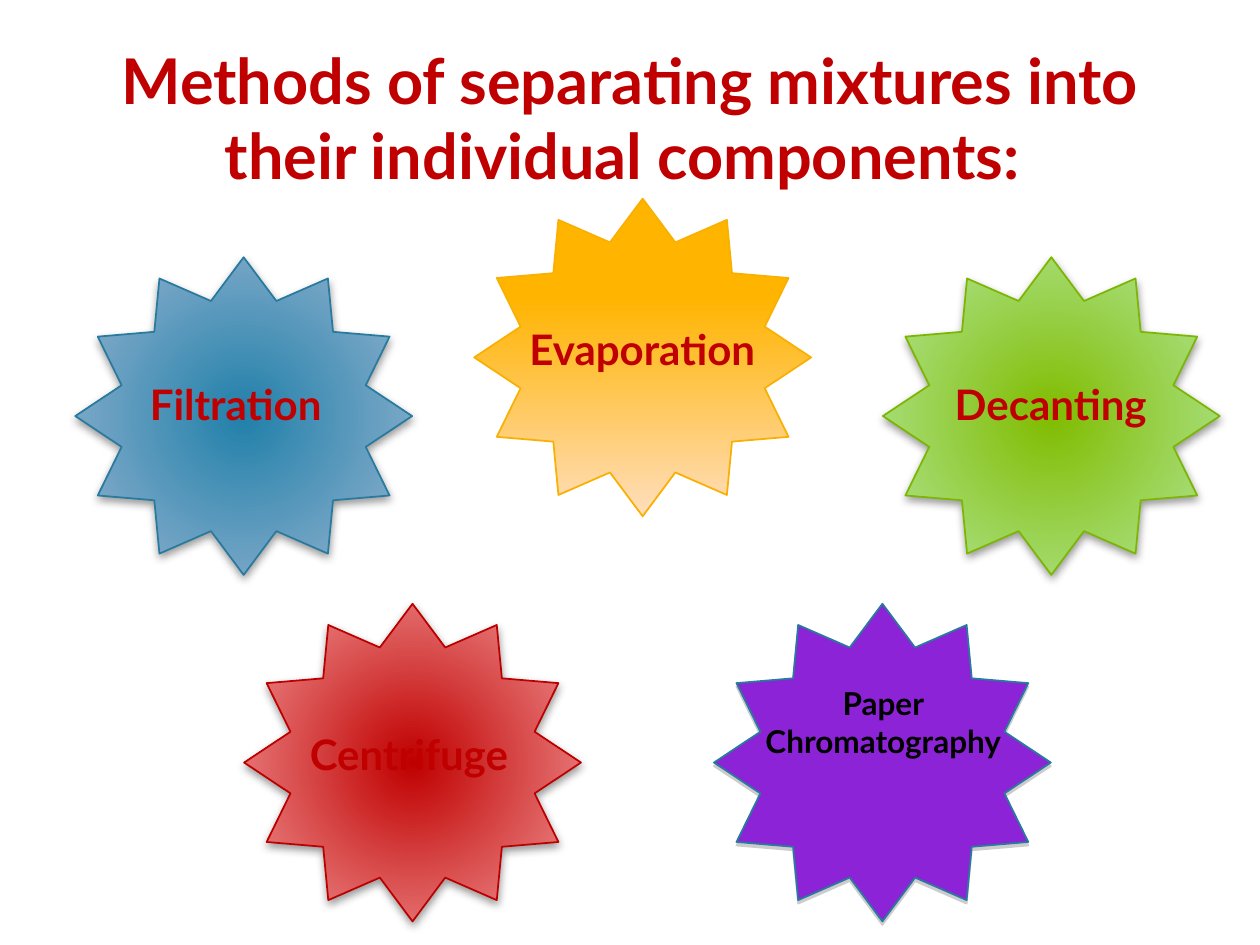
"""Build a slide of five stars naming methods of separating mixtures."""
from lxml import etree
from pptx import Presentation
from pptx.dml.color import RGBColor
from pptx.enum.shapes import MSO_SHAPE
from pptx.enum.text import MSO_ANCHOR, PP_ALIGN
from pptx.oxml import parse_xml
from pptx.oxml.ns import nsdecls, qn
from pptx.util import Pt

STAR = MSO_SHAPE.STAR_12_POINT
LEFT, CENTER = PP_ALIGN.LEFT, PP_ALIGN.CENTER
TOP, BOTTOM = MSO_ANCHOR.TOP, MSO_ANCHOR.BOTTOM
RED = RGBColor(0xC0, 0x00, 0x00)
BLACK = RGBColor(0x00, 0x00, 0x00)
PURPLE = RGBColor(0x8D, 0x23, 0xD6)
TEAL = RGBColor(0x28, 0x7A, 0x9E)
CRIMSON = RGBColor(0xBC, 0x00, 0x00)
AMBER = RGBColor(0xF9, 0xB0, 0x00)
GREEN = RGBColor(0x7D, 0xB6, 0x02)
FONT = "Lato"
WIDE, HIGH = 192.5, 181.5
ROWS = {"crest": 113.5, "upper": 147, "lower": 345}

TITLE = "Methods of separating mixtures into their individual components: "
SOFT, HARD = ("000000", 5), ("808080", 0)
RADIAL = ('<a:path path="circle"><a:fillToRect l="100000" t="100000" '
          'r="100000" b="100000"/></a:path>')
LINEAR = '<a:lin ang="5400000" scaled="0"/>'

STARS = [
    (43, "upper", [(0, "2180AA"), (69, "75A5C5"), (100, "B8CCDC")], RADIAL, TEAL, SOFT),
    (139.5, "lower", [(0, "C00000"), (69, "E36B6B"), (100, "ECB3B3")], RADIAL, CRIMSON, SOFT),
    (271, "crest", [(31, "FFB400"), (100, "FFDEBD")], LINEAR, AMBER, None),
    (408, "lower", None, None, TEAL, HARD),
    (504.5, "upper", [(0, "80BC00"), (69, "A3DA6D"), (100, "CBE7B4")], RADIAL, GREEN, SOFT),
]
LABELS = [
    (TITLE, (43, 8.5, 634, 105), 36, RED, CENTER, BOTTOM),
    ("Filtration", (78.5, 212.5, 121, 36.5), 24, RED, LEFT, TOP),
    ("Evaporation", (295.5, 181.5, 168.5, 36.5), 24, RED, LEFT, TOP),
    ("Decanting", (538.5, 212.5, 158.5, 36.5), 24, RED, LEFT, TOP),
    ("Centrifuge", (170, 412.5, 146, 36), 24, RED, LEFT, TOP),
    ("Paper\nChromatography", (397.5, 387.5, 214.5, 51), 18, BLACK, CENTER, TOP),
]


def shade(star, stops, way):
    star.fill.background()
    marks = "".join(
        f'<a:gs pos="{pos * 1000}"><a:srgbClr val="{tint}"/></a:gs>' for pos, tint in stops)
    grad = parse_xml(f'<a:gradFill {nsdecls("a")} rotWithShape="1">'
                     f'<a:gsLst>{marks}</a:gsLst>{way}</a:gradFill>')
    props = star._element.spPr
    props.replace(props.find(qn("a:noFill")), grad)


def cast(star, tint, blur):
    effects = star._element.spPr.find(qn("a:effectLst"))
    glow = etree.SubElement(effects, qn("a:outerShdw"), blurRad=str(Pt(blur)),
                            dist=str(Pt(2)), dir="5400000", rotWithShape="0")
    color = etree.SubElement(glow, qn("a:srgbClr"), val=tint)
    etree.SubElement(color, qn("a:alpha"), val="40000")


def add_star(slide, left, row, stops, way, edge, shadow):
    star = slide.shapes.add_shape(STAR, Pt(left), Pt(ROWS[row]), Pt(WIDE), Pt(HIGH))
    star.shadow.inherit = False
    if stops:
        shade(star, stops, way)
    else:
        star.fill.solid()
        star.fill.fore_color.rgb = PURPLE
    star.line.color.rgb = edge
    star.line.width = Pt(1)
    if shadow:
        cast(star, *shadow)


def add_label(slide, text, place, size, color, align, anchor):
    frame = slide.shapes.add_textbox(*map(Pt, place)).text_frame
    frame.word_wrap = True
    frame.vertical_anchor = anchor
    frame.text = text
    for para in frame.paragraphs:
        para.alignment = align
        for run in para.runs:
            font = run.font
            font.name, font.size, font.bold = FONT, Pt(size), True
            font.color.rgb = color


def main():
    deck = Presentation()
    deck.slide_width, deck.slide_height = Pt(720), Pt(540)
    slide = deck.slides.add_slide(deck.slide_layouts[6])
    for star in STARS:
        add_star(slide, *star)
    for label in LABELS:
        add_label(slide, *label)
    deck.save("out.pptx")


if __name__ == "__main__":
    main()
